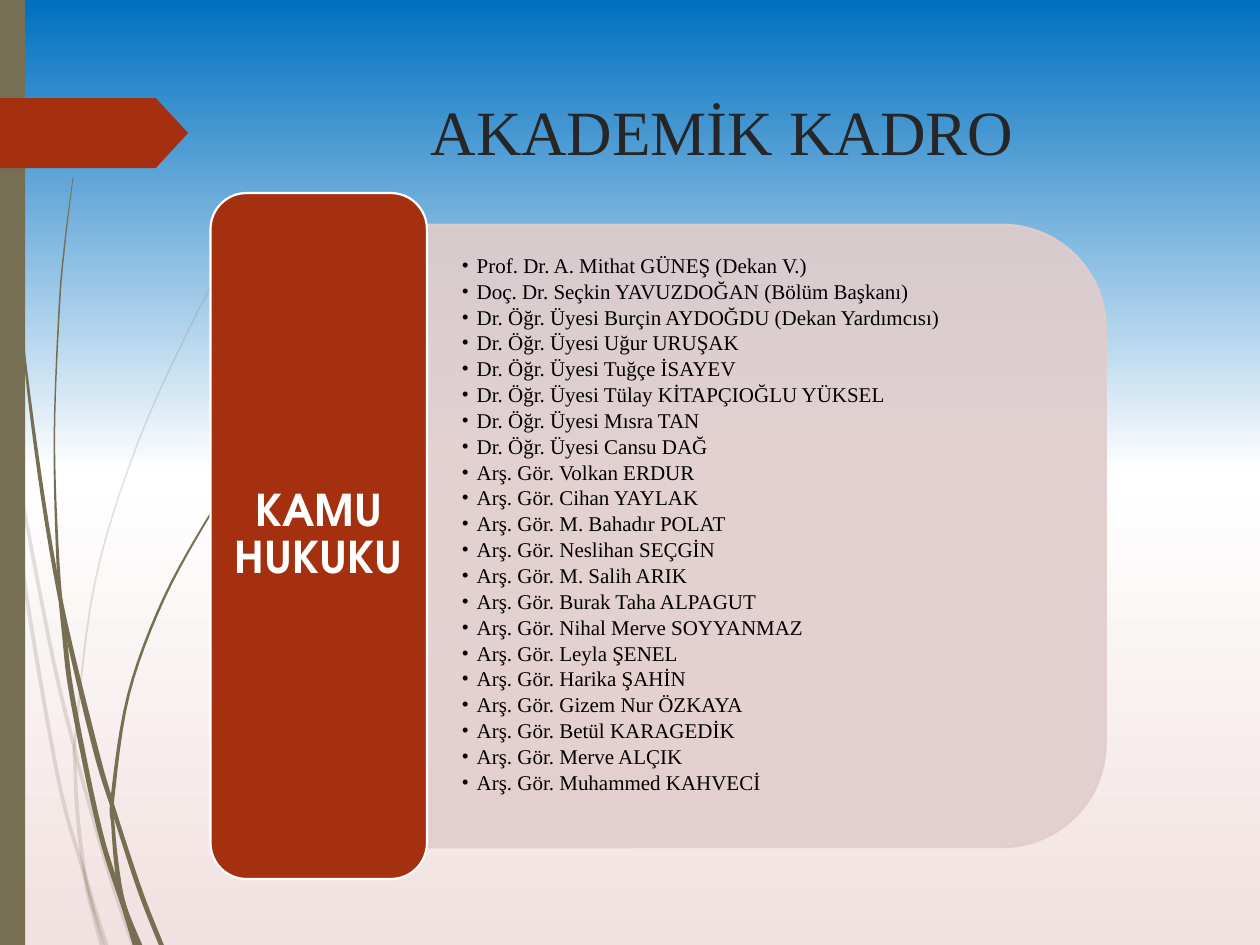
"""Build the academic staff slide for the public law department."""
from dataclasses import dataclass

from lxml import etree
from pptx import Presentation
from pptx.dml.color import RGBColor
from pptx.enum.shapes import MSO_SHAPE
from pptx.enum.text import MSO_ANCHOR, PP_ALIGN
from pptx.oxml import parse_xml
from pptx.oxml.ns import nsdecls, qn
from pptx.util import Pt

RECT, TAG = MSO_SHAPE.RECTANGLE, MSO_SHAPE.PENTAGON
ROUND, ROUND_TOP = MSO_SHAPE.ROUNDED_RECTANGLE, MSO_SHAPE.ROUND_2_SAME_RECTANGLE
MIDDLE, LEFT, CENTER = MSO_ANCHOR.MIDDLE, PP_ALIGN.LEFT, PP_ALIGN.CENTER
STEPS = 6


@dataclass(frozen=True)
class Theme:
    """Colours, fonts and type sizes."""
    sky: tuple = ((0, "0070C0"), (50, "FFFFFF"), (100, "F1E1E0"))
    olive: str = "766F54"
    rust: str = "A53010"
    rose: str = "E1CDCC"
    white: str = "FFFFFF"
    ink: str = "262626"
    black: str = "000000"
    serif: str = "Times New Roman"
    sans: str = "TeX Gyre Adventor"
    title: int = 36
    label: int = 25
    body: int = 12


THEME = Theme()

STAFF = [
    "Prof. Dr. A. Mithat GÜNEŞ (Dekan V.)",
    "Doç. Dr. Seçkin YAVUZDOĞAN (Bölüm Başkanı)",
    "Dr. Öğr. Üyesi Burçin AYDOĞDU (Dekan Yardımcısı)",
    "Dr. Öğr. Üyesi Uğur URUŞAK",
    "Dr. Öğr. Üyesi Tuğçe İSAYEV",
    "Dr. Öğr. Üyesi Tülay KİTAPÇIOĞLU YÜKSEL",
    "Dr. Öğr. Üyesi Mısra TAN",
    "Dr. Öğr. Üyesi Cansu DAĞ",
    "Arş. Gör. Volkan ERDUR",
    "Arş. Gör. Cihan YAYLAK",
    "Arş. Gör. M. Bahadır POLAT",
    "Arş. Gör. Neslihan SEÇGİN",
    "Arş. Gör. M. Salih ARIK",
    "Arş. Gör. Burak Taha ALPAGUT",
    "Arş. Gör. Nihal Merve SOYYANMAZ",
    "Arş. Gör. Leyla ŞENEL",
    "Arş. Gör. Harika ŞAHİN",
    "Arş. Gör. Gizem Nur ÖZKAYA",
    "Arş. Gör. Betül KARAGEDİK",
    "Arş. Gör. Merve ALÇIK",
    "Arş. Gör. Muhammed KAHVECİ",
]

PALE_BLADES = [
    ((0, 1, 5, 7),
     [(0.7, 209, 1.4), (5, 245, 1.5), (9, 266, 2), (30, 375, 2.2), (43.2, 430, 2.2),
      (45, 438, 2.2), (62.3, 499, 2.2), (76.3, 540, 2.9)]),
    ((0, 5, 6),
     [(6, 252, 0.7), (9, 281, 1.5), (14.8, 338, 2.2), (33.5, 446, 2.2),
      (46.8, 495, 2.2), (50.4, 511, 2.2), (58, 540, 2.2)]),
    ((0, 6, 7, 10, 11),
     [(156.2, 110, 0.4), (144.7, 126, 0.5), (134.3, 142, 0.7), (114.1, 176, 0.8),
      (79.6, 251, 0.9), (54.4, 332, 1), (43.2, 420, 1.4), (42.8, 436, 2),
      (44.3, 465, 2.2), (47.5, 493, 2.2), (51.8, 511, 2.2), (60.8, 540, 2.2)]),
    ((0, 2), [(47, 492, 0.3), (51, 511, 2), (59.4, 540, 0.9)]),
]
DARK_BLADES = [
    ((0, 4, 6, 8),
     [(1.8, 0, 0.7), (4, 79, 0.7), (10.4, 168, 0.9), (20.5, 256, 2), (34.2, 341, 2.4),
      (53.8, 425, 3.2), (65, 463, 2.6), (80, 509, 2.9), (92.2, 540, 2.9)]),
    ((0, 4, 5, 8, 9),
     [(41.8, 101.5, 0.4), (37.1, 139, 0.8), (33.9, 176, 0.9), (31.1, 251, 0.9),
      (33.3, 324, 1.8), (36.9, 364, 2.6), (41.8, 401, 2.9), (56.9, 474, 2.9),
      (71, 519, 2.9), (77, 540, 2.4)]),
    ((0, 5, 6, 8, 9),
     [(155.2, 247.7, 0.5), (137.5, 269, 0.9), (121.3, 292, 1.2), (93.6, 342, 1.5),
      (73.4, 397, 1.6), (64.4, 455, 2.2), (64.6, 472, 2), (67, 497.5, 2.6),
      (71, 517.7, 2.6), (80, 540, 2.6)]),
    ((0, 2), [(66, 497.5, 0.4), (71, 518, 2.6), (78.5, 540, 1.6)]),
]


def apply(obj, values):
    """Set each named attribute of an object."""
    for name, value in values.items():
        setattr(obj, name, value)


def paint(sp, fill, line=None, alpha=None):
    """Give a shape a flat fill and an optional line."""
    sp.shadow.inherit = False
    sp.fill.solid()
    sp.fill.fore_color.rgb = RGBColor.from_string(fill)
    if line:
        sp.line.color.rgb = RGBColor.from_string(line)
        sp.line.width = Pt(1.25)
    else:
        sp.line.fill.background()
    if alpha:
        for clr in sp._element.spPr.iter(qn("a:srgbClr")):
            etree.SubElement(clr, qn("a:alpha"), val=str(alpha * 1000))


def add_shape(s, kind, box, fill, line=None, alpha=None):
    """Add a painted preset shape."""
    sp = s.shapes.add_shape(kind, *map(Pt, box))
    paint(sp, fill, line, alpha)
    return sp


def smooth(points):
    """Return points along a Catmull-Rom curve."""
    ext = [points[0], *points, points[-1]]
    curve = [
        tuple(b + t * (c - a + t * (2 * a - 5 * b + 4 * c - d + t * (3 * (b - c) + d - a))) / 2
              for a, b, c, d in zip(*quad))
        for quad in zip(ext, ext[1:], ext[2:], ext[3:])
        for t in (i / STEPS for i in range(STEPS))
    ]
    return curve + [points[-1]]


def add_blade(s, cuts, points, alpha=None):
    """Add a grass blade, cut in pieces, from centre points and widths."""
    curve = smooth(points)
    for start, end in zip(cuts, cuts[1:]):
        piece = curve[start * STEPS:end * STEPS + 1]
        edge = [(x - w / 2, y) for x, y, w in piece]
        edge += [(x + w / 2, y) for x, y, w in reversed(piece)]
        outline = [(Pt(x), Pt(y)) for x, y in edge]
        builder = s.shapes.build_freeform(*outline[0])
        builder.add_line_segments(outline[1:])
        paint(builder.convert_to_shape(), THEME.olive, alpha=alpha)


def write(sp, lines, frame, para, font, color, bullet=False):
    """Write paragraphs in one format into a shape."""
    tf = sp.text_frame
    apply(tf, {"word_wrap": True, "vertical_anchor": MIDDLE, **frame})
    for i, line in enumerate(lines):
        p = tf.add_paragraph() if i else tf.paragraphs[0]
        apply(p, para)
        r = p.add_run()
        r.text = line
        apply(r.font, font)
        r.font.color.rgb = RGBColor.from_string(color)
        if bullet:
            pPr = p._p.get_or_add_pPr()
            pPr.attrib.update({"marL": str(Pt(8.64)), "indent": str(-Pt(8.64))})
            etree.SubElement(pPr, qn("a:buFont"), typeface=THEME.serif)
            etree.SubElement(pPr, qn("a:buChar"), char="•")


def set_background(s, stops):
    """Fill the background with a vertical gradient."""
    s.background.fill.solid()
    bgPr = s.background._cSld.bg.bgPr
    gs = "".join(f'<a:gs pos="{pos * 1000}"><a:srgbClr val="{c}"/></a:gs>' for pos, c in stops)
    bgPr.replace(bgPr[0], parse_xml(
        f'<a:gradFill {nsdecls("a")} rotWithShape="1"><a:gsLst>{gs}</a:gsLst>'
        '<a:lin ang="5400000" scaled="0"/></a:gradFill>'))


def main():
    """Build and save the slide."""
    prs = Presentation()
    apply(prs, {"slide_width": Pt(720), "slide_height": Pt(540)})
    s = prs.slides.add_slide(prs.slide_layouts[6])
    set_background(s, THEME.sky)
    for blades, alpha in ((PALE_BLADES, 20), (DARK_BLADES, None)):
        for cuts, points in blades:
            add_blade(s, cuts, points, alpha)
    add_shape(s, RECT, (0, 0, 14.4, 540), THEME.olive)
    tag = add_shape(s, TAG, (0, 56, 107.5, 40), THEME.rust)
    tag.adjustments[0] = 0.46

    title = s.shapes.add_textbox(*map(Pt, (153, 44, 519, 61)))
    write(title, ["AKADEMİK KADRO"], {}, {"alignment": CENTER},
          {"size": Pt(THEME.title), "name": THEME.serif}, THEME.ink)

    panel = add_shape(s, ROUND_TOP, (260, 112.3, 355.7, 388), THEME.rose, THEME.rose, 90)
    panel.rotation = 90
    staff = s.shapes.add_textbox(*map(Pt, (244.3, 140, 371, 320)))
    write(staff, STAFF,
          {"margin_left": Pt(19.5), "margin_right": Pt(19.5), "margin_top": 0, "margin_bottom": 0},
          {"alignment": LEFT, "line_spacing": 0.9, "space_after": Pt(1.8)},
          {"size": Pt(THEME.body), "name": THEME.serif}, THEME.black, bullet=True)

    label = add_shape(s, ROUND, (120.3, 110.3, 123.7, 392), THEME.rust, THEME.white)
    write(label, ["KAMU HUKUKU"], {}, {"alignment": CENTER, "line_spacing": 0.9},
          {"size": Pt(THEME.label), "name": THEME.sans, "bold": True}, THEME.white)
    prs.save("out.pptx")


if __name__ == "__main__":
    main()
